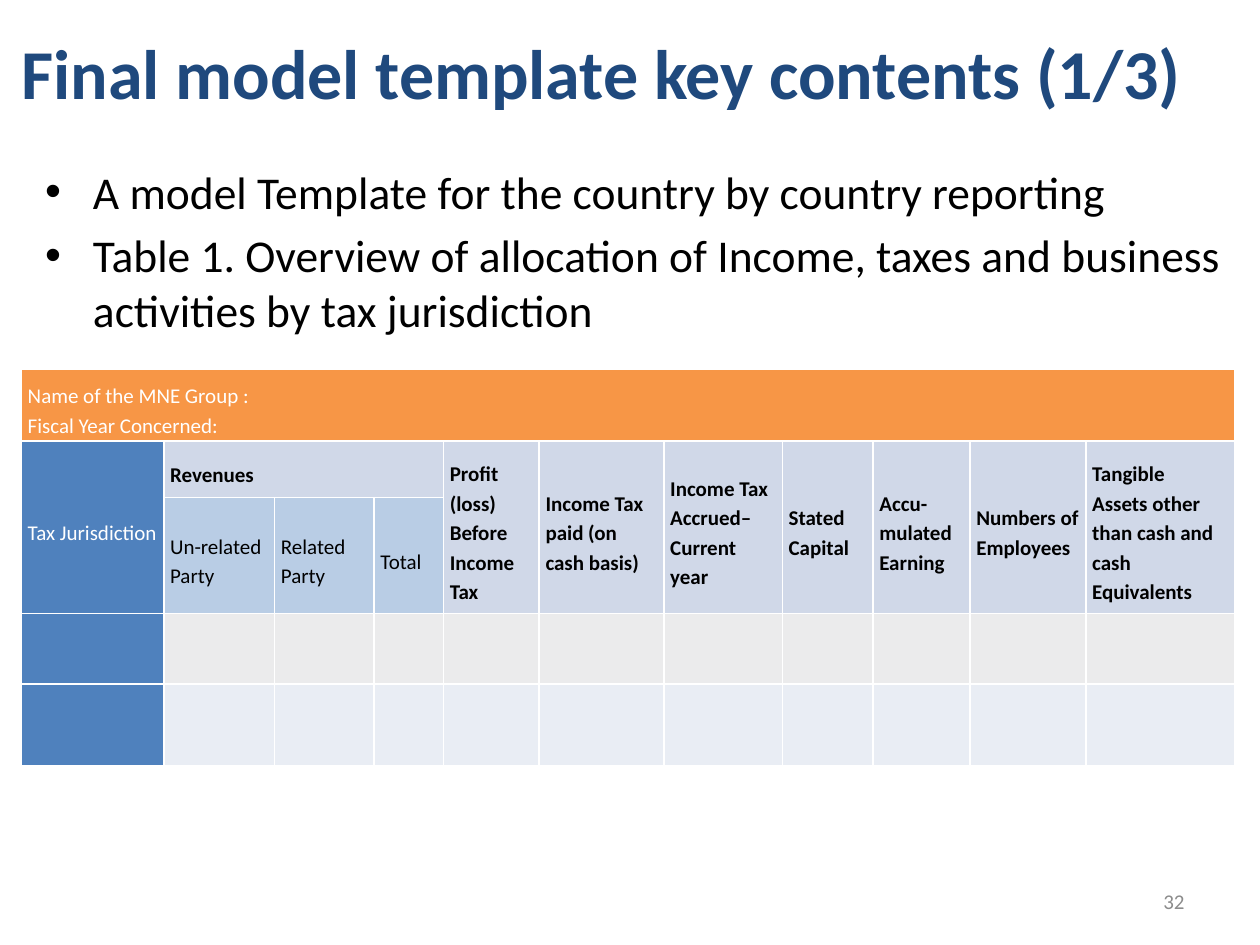
from lxml.etree import SubElement
from pptx import Presentation
from pptx.dml.color import RGBColor
from pptx.enum.text import MSO_ANCHOR as Anchor, PP_ALIGN as Align
from pptx.oxml import parse_xml
from pptx.oxml.ns import nsdecls, qn
from pptx.util import Inches, Pt

FONT = "Calibri"
WHITE, BLACK, NAVY, GRAY = "FFFFFF", "000000", "1F497D", "8C8C8C"
ORANGE, BLUE, PALE_BLUE, LIGHT_BLUE = "F79646", "4F81BD", "D0D8E8", "B9CDE5"
BODY_FILLS = ["EBEBEC", "E9EDF4"]

COLUMN_WIDTHS = [1.13, 0.88, 0.79, 0.55, 0.76, 0.99, 0.94, 0.72, 0.77, 0.92, 1.18]
ROW_HEIGHTS = [0.57, 0.45, 0.92, 0.56, 0.65]
REVENUE_PARTS = ["Un-related Party", "Related Party", "Total"]
MEASURES = [
    "Profit\n(loss)\nBefore Income \vTax",
    "Income Tax paid (on cash basis)",
    "Income Tax Accrued– Current year",
    "Stated\nCapital",
    "Accu-mulated Earning",
    "Numbers of Employees",
    "Tangible\nAssets other than cash and cash Equivalents",
]


def color(value):
    return RGBColor.from_string(value)


def style_text(frame, size, text_color, bold=False):
    for para in frame.paragraphs:
        for span in para.runs:
            span.font.name = FONT
            span.font.size = Pt(size)
            span.font.bold = bold
            span.font.color.rgb = color(text_color)


def add_text(page, area, text, size, text_color, bold=False, anchor=Anchor.TOP):
    box = page.shapes.add_textbox(*[Inches(value) for value in area])
    frame = box.text_frame
    frame.word_wrap = True
    frame.vertical_anchor = anchor
    frame.text = text
    style_text(frame, size, text_color, bold)
    return frame


def add_title(page, area):
    frame = add_text(page, area, "Final model template key contents (1/3)",
                     40, NAVY, True, Anchor.MIDDLE)
    frame.margin_left = frame.margin_right = 0
    frame.margin_top = frame.margin_bottom = 0


def add_bullets(page, area):
    lines = [
        "A model Template for the country by country reporting",
        "Table 1. Overview of allocation of Income, taxes and business "
        "activities by tax jurisdiction",
    ]
    frame = add_text(page, area, "\n".join(lines), 26, BLACK)
    for index, para in enumerate(frame.paragraphs):
        if index:
            para.space_before = Pt(5.2)
        properties = para._p.get_or_add_pPr()
        properties.set("marL", str(Inches(0.38)))
        properties.set("indent", str(-Inches(0.38)))
        SubElement(properties, qn("a:buFont"), typeface="Arial")
        SubElement(properties, qn("a:buChar"), char="•")


def add_page_number(page, area):
    frame = add_text(page, area, "32", 12, GRAY, anchor=Anchor.MIDDLE)
    frame.paragraphs[0].alignment = Align.RIGHT


def paint_cell(cell, fill):
    cell.fill.solid()
    cell.fill.fore_color.rgb = color(fill)
    properties = cell._tc.get_or_add_tcPr()
    for index, side in enumerate(["lnL", "lnR", "lnT", "lnB"]):
        properties.insert(index, parse_xml(
            f'<a:{side} {nsdecls("a")} w="{Pt(1)}"><a:solidFill>'
            f'<a:srgbClr val="{WHITE}"/></a:solidFill></a:{side}>'))


def write_cell(cell, text, text_color, bold=False):
    cell.margin_left, cell.margin_right = Inches(0.05), Inches(0.04)
    cell.margin_top, cell.margin_bottom = Inches(0.07), 0
    cell.vertical_anchor = Anchor.MIDDLE
    cell.text_frame.text = text
    for para in cell.text_frame.paragraphs:
        para.line_spacing = 1.15
    style_text(cell.text_frame, 12, text_color, bold)


def cell_fill(row, column):
    if row == 0:
        return ORANGE
    if column == 0:
        return BLUE
    if row > 2:
        return BODY_FILLS[row - 3]
    return LIGHT_BLUE if row == 2 and column <= 3 else PALE_BLUE


def add_report_table(page, area):
    table = page.shapes.add_table(
        len(ROW_HEIGHTS), len(COLUMN_WIDTHS),
        *[Inches(value) for value in area]).table
    table.first_row = table.horz_banding = False
    for column, width in zip(table.columns, COLUMN_WIDTHS):
        column.width = Inches(width)
    for row, height in zip(table.rows, ROW_HEIGHTS):
        row.height = Inches(height)
    for row in range(len(ROW_HEIGHTS)):
        for column in range(len(COLUMN_WIDTHS)):
            paint_cell(table.cell(row, column), cell_fill(row, column))

    table.cell(0, 0).merge(table.cell(0, len(COLUMN_WIDTHS) - 1))
    table.cell(1, 1).merge(table.cell(1, 3))
    for column in [0, *range(4, len(COLUMN_WIDTHS))]:
        table.cell(1, column).merge(table.cell(2, column))

    write_cell(table.cell(0, 0), "Name of the MNE Group :\nFiscal Year Concerned:", WHITE)
    write_cell(table.cell(1, 0), "Tax Jurisdiction", WHITE)
    write_cell(table.cell(1, 1), "Revenues", BLACK, True)
    for column, text in enumerate(REVENUE_PARTS, 1):
        write_cell(table.cell(2, column), text, BLACK)
    for column, text in enumerate(MEASURES, 4):
        write_cell(table.cell(1, column), text, BLACK, True)


def main():
    deck = Presentation()
    deck.slide_width, deck.slide_height = Inches(10), Inches(7.5)
    page = deck.slides.add_slide(deck.slide_layouts[6])
    add_title(page, (0.17, 0.2, 9.74, 0.73))
    add_bullets(page, (0.26, 1.25, 9.74, 1.5))
    add_page_number(page, (7.17, 6.95, 2.33, 0.4))
    add_report_table(page, (0.17, 2.93, sum(COLUMN_WIDTHS), sum(ROW_HEIGHTS)))
    deck.save("out.pptx")


if __name__ == "__main__":
    main()
